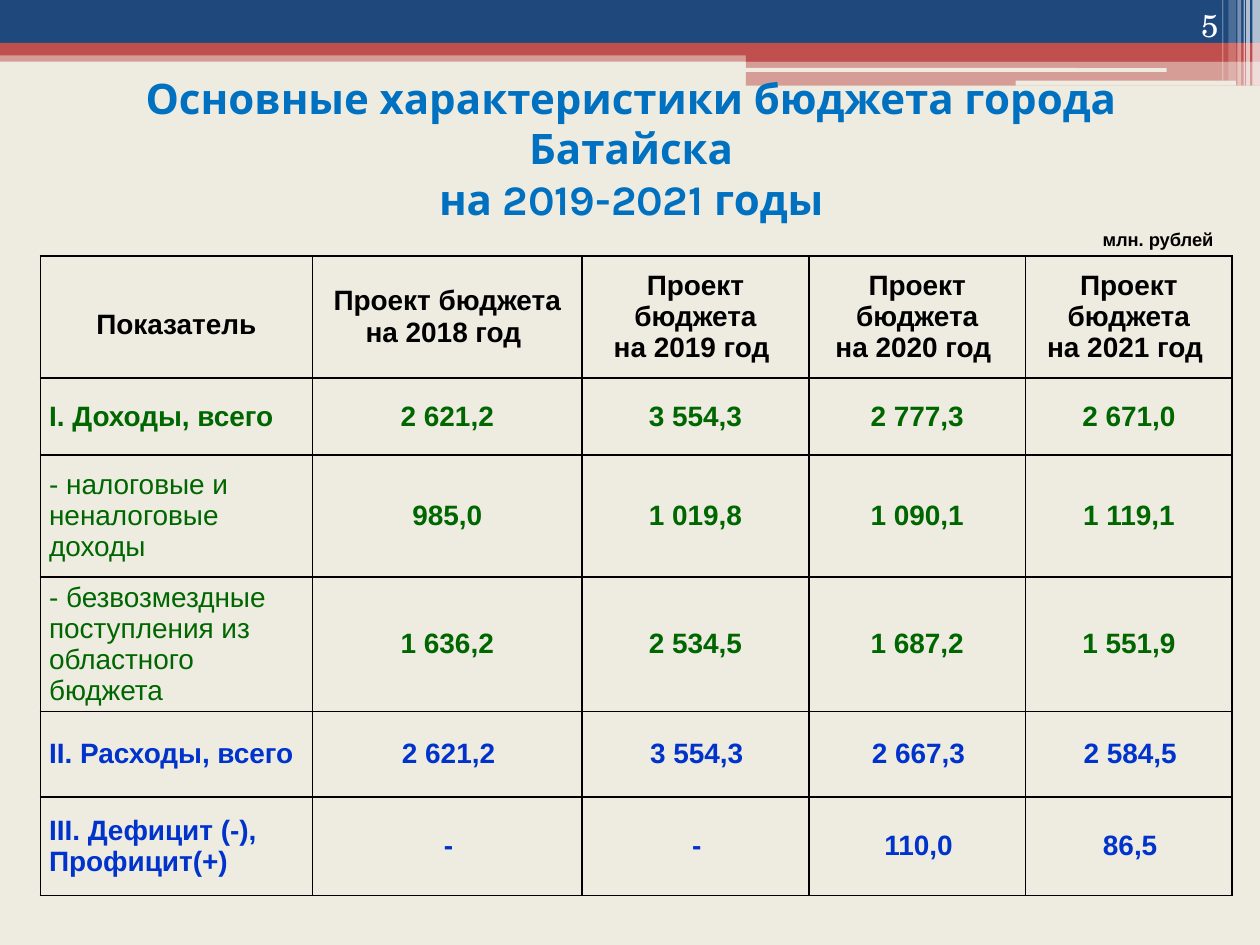
from dataclasses import dataclass

from lxml.etree import SubElement
from pptx import Presentation
from pptx.dml.color import RGBColor
from pptx.enum.shapes import MSO_SHAPE
from pptx.enum.text import MSO_ANCHOR, PP_ALIGN
from pptx.oxml.ns import qn
from pptx.util import Inches, Pt


@dataclass(frozen=True)
class Theme:
    paper: str = "EEECE1"
    navy: str = "1F497D"
    red: str = "C0504D"
    white: str = "FFFFFF"
    black: str = "000000"
    title: str = "0070C0"
    income: str = "006600"
    spending: str = "0033CC"
    title_font: str = "Karla"
    body_font: str = "Arial"
    number_font: str = "TeX Gyre Schola"
    title_size: float = 24
    table_size: float = 16
    unit_size: float = 10.5
    number_size: float = 18


class BudgetSlide:
    def __init__(self, presentation, theme):
        self.theme = theme
        self.slide = presentation.slides.add_slide(presentation.slide_layouts[6])
        background = self.slide.background.fill
        background.solid()
        background.fore_color.rgb = RGBColor.from_string(theme.paper)

    def bar(self, left, top, width, height, color, opacity=100, rounded=False):
        preset = MSO_SHAPE.ROUNDED_RECTANGLE if rounded else MSO_SHAPE.RECTANGLE
        bar = self.slide.shapes.add_shape(
            preset, Inches(left), Inches(top), Inches(width), Inches(height))
        bar.shadow.inherit = False
        bar.line.fill.background()
        bar.fill.solid()
        bar.fill.fore_color.rgb = RGBColor.from_string(color)
        if opacity < 100:
            tint = bar.fill._xPr.find(".//" + qn("a:srgbClr"))
            SubElement(tint, qn("a:alpha"), val=str(opacity * 1000))

    def format(self, paragraph, font, size, color, bold, align):
        paragraph.alignment = align
        for run in paragraph.runs:
            run.font.name = font
            run.font.size = Pt(size)
            run.font.bold = bold
            run.font.color.rgb = RGBColor.from_string(color)

    def text(self, box, words, font, size, color, bold, align, anchor):
        frame = self.slide.shapes.add_textbox(*map(Inches, box)).text_frame
        frame.word_wrap = True
        frame.vertical_anchor = anchor
        frame.text = words
        self.format(frame.paragraphs[0], font, size, color, bold, align)

    def border(self, cell):
        properties = cell._tc.get_or_add_tcPr()
        for side in ("lnL", "lnR", "lnT", "lnB"):
            line = SubElement(properties, qn(f"a:{side}"), w=str(Pt(1)))
            fill = SubElement(line, qn("a:solidFill"))
            SubElement(fill, qn("a:srgbClr"), val=self.theme.black)

    def cell(self, cell, words, color, bold, align, indent=0.0, spacing=None):
        self.border(cell)
        cell.fill.background()
        cell.vertical_anchor = MSO_ANCHOR.MIDDLE
        cell.margin_left = cell.margin_right = Inches(0.07)
        cell.margin_top = cell.margin_bottom = 0
        cell.text_frame.text = words
        for paragraph in cell.text_frame.paragraphs:
            if indent:
                paragraph._p.get_or_add_pPr().set("indent", str(Inches(indent)))
            if spacing:
                paragraph.line_spacing = spacing
            self.format(paragraph, self.theme.body_font, self.theme.table_size,
                        color, bold, align)

    def table(self, left, top, widths, heights):
        table = self.slide.shapes.add_table(
            len(heights), len(widths), Inches(left), Inches(top),
            Inches(sum(widths)), Inches(sum(heights))).table
        table.first_row = table.horz_banding = False
        for column, width in zip(table.columns, widths):
            column.width = Inches(width)
        for row, height in zip(table.rows, heights):
            row.height = Inches(height)
        return table


def main():
    theme = Theme()
    presentation = Presentation()
    presentation.slide_width, presentation.slide_height = Inches(10), Inches(7.5)
    page = BudgetSlide(presentation, theme)

    # Header bands
    page.bar(0, 0.4, 10, 0.09, theme.red, 50)
    page.bar(0, 0, 10, 0.34, theme.navy)
    page.bar(0, 0.34, 10, 0.1, theme.red)
    page.bar(5.92, 0.39, 4.08, 0.1, theme.red)
    page.bar(5.92, 0.48, 4.08, 0.2, theme.red, 50)
    page.bar(5.91, 0.54, 3.35, 0.03, theme.paper, rounded=True)
    page.bar(8.06, 0.64, 1.75, 0.04, theme.paper, rounded=True)

    # Translucent stripes at the right edge
    for left, width, height, opacity in (
            (9.94, 0.06, 0.68, 65), (9.89, 0.03, 0.68, 65), (9.87, 0.01, 0.68, 60),
            (9.82, 0.03, 0.68, 40), (9.75, 0.06, 0.64, 20), (9.7, 0.01, 0.64, 30)):
        page.bar(left, 0, width, height, theme.white, opacity)

    # Title
    page.text((0.51, 0.74, 9, 0.87),
              "Основные характеристики бюджета города Батайска\vна 2019-2021 годы",
              theme.title_font, theme.title_size, theme.title, True,
              PP_ALIGN.CENTER, MSO_ANCHOR.MIDDLE)

    # Budget table: header row
    budget = page.table(0.32, 2.03, (2.16, 2.14, 1.8, 1.72, 1.64),
                        (0.97, 0.61, 0.97, 0.97, 0.68, 0.78))
    page.cell(budget.cell(0, 0), "Показатель", theme.black, True,
              PP_ALIGN.CENTER, -0.07, 1.5)
    for column, year in enumerate(range(2018, 2022), 1):
        page.cell(budget.cell(0, column), f"Проект бюджета\nна {year} год ",
                  theme.black, True, PP_ALIGN.CENTER)

    # Budget table: indicators
    indicators = (
        ("I. Доходы, всего", True, theme.income, -0.07,
         ("2 621,2", "3 554,3", "2 777,3", "2 671,0")),
        ("- налоговые и неналоговые доходы", False, theme.income, -0.07,
         ("985,0", "1 019,8", "1 090,1", "1 119,1")),
        ("- безвозмездные поступления из областного бюджета", False, theme.income, -0.07,
         ("1 636,2", "2 534,5", "1 687,2", "1 551,9")),
        ("II. Расходы, всего", True, theme.spending, 0.02,
         ("2 621,2", "3 554,3", "2 667,3", "2 584,5")),
        ("III. Дефицит (-), Профицит(+)", True, theme.spending, 0.02,
         ("-", "-", "110,0", "86,5")),
    )
    for row, (label, bold, color, indent, amounts) in enumerate(indicators, 1):
        page.cell(budget.cell(row, 0), label, color, bold, PP_ALIGN.LEFT)
        for column, amount in enumerate(amounts, 1):
            page.cell(budget.cell(row, column), amount, color, True,
                      PP_ALIGN.CENTER, indent)

    # Unit and page number
    page.text((8.31, 1.76, 1.42, 0.28), "млн. рублей", theme.body_font,
              theme.unit_size, theme.black, True, PP_ALIGN.RIGHT, MSO_ANCHOR.TOP)
    page.text((8.94, 0, 0.83, 0.4), "5", theme.number_font,
              theme.number_size, theme.white, False, PP_ALIGN.RIGHT, MSO_ANCHOR.BOTTOM)

    presentation.save("out.pptx")


if __name__ == "__main__":
    main()
